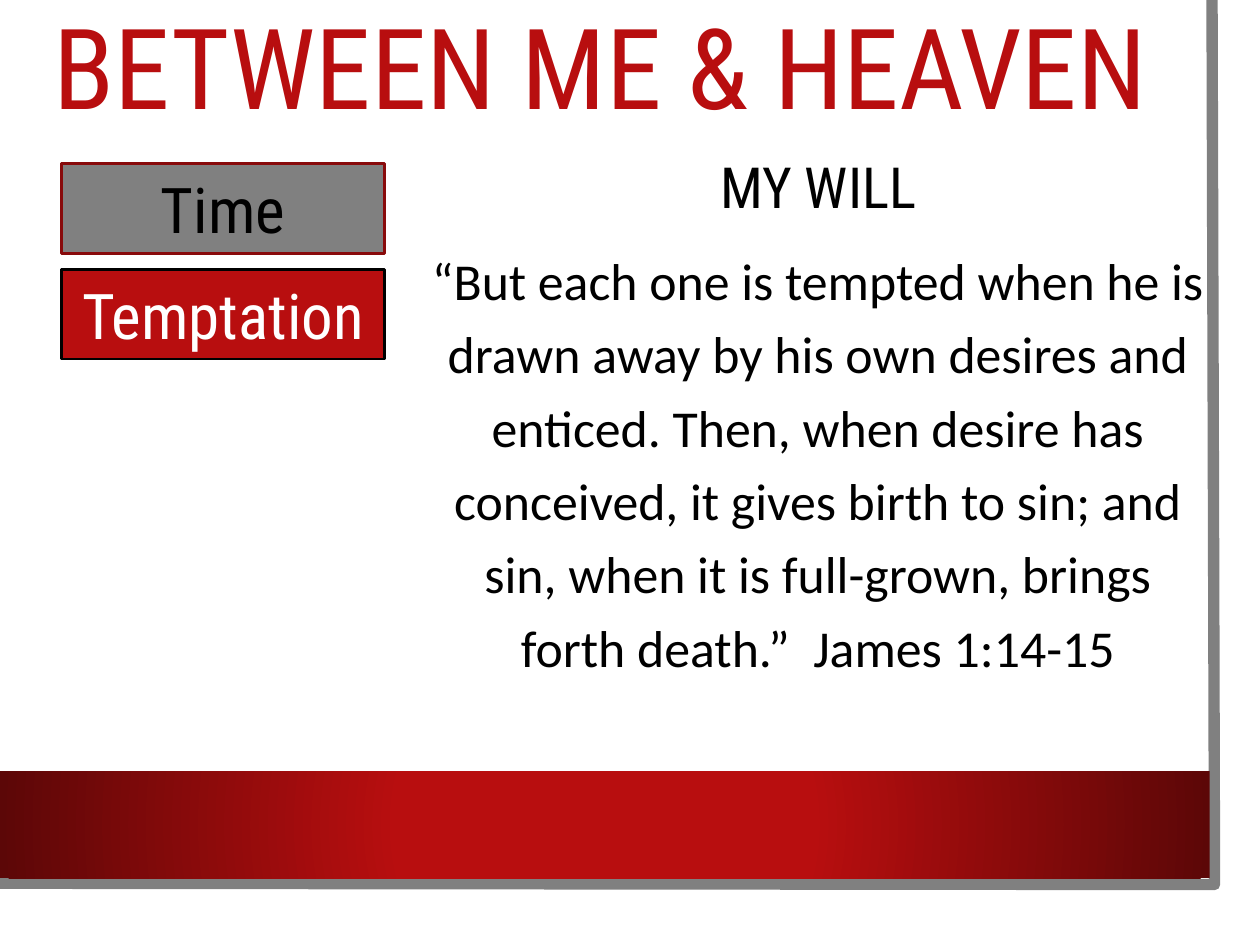
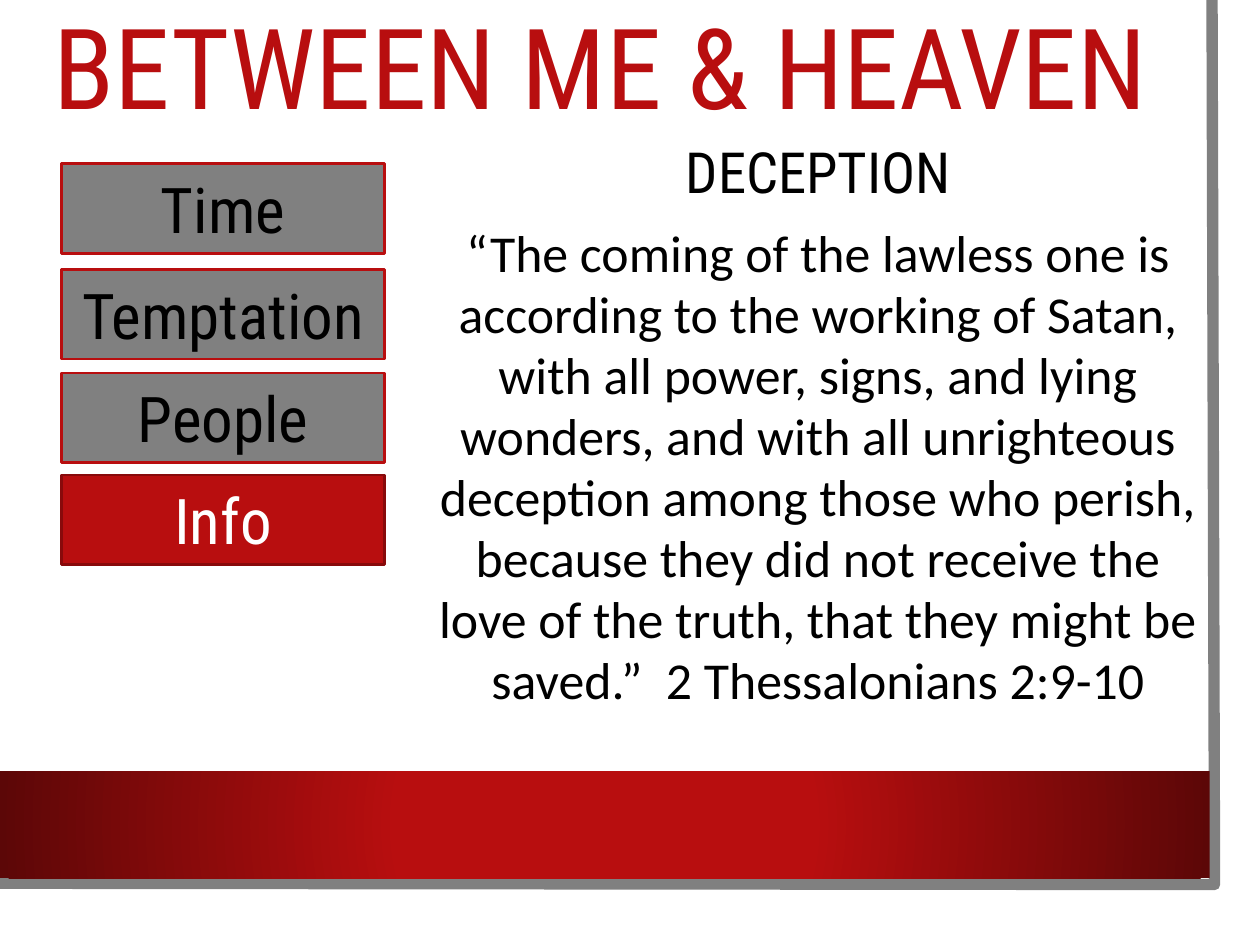
from dataclasses import dataclass

from lxml import etree
from pptx import Presentation
from pptx.dml.color import RGBColor
from pptx.enum.shapes import MSO_SHAPE
from pptx.enum.text import MSO_ANCHOR, PP_ALIGN
from pptx.oxml.ns import qn
from pptx.util import Inches, Pt

RECTANGLE = MSO_SHAPE.RECTANGLE
CENTER = PP_ALIGN.CENTER
TOP = MSO_ANCHOR.TOP
MIDDLE = MSO_ANCHOR.MIDDLE


@dataclass(frozen=True)
class Theme:
    red: str = "B80E0F"
    dark_red: str = "880A0B"
    deep_red: str = "5C0707"
    gray: str = "808080"
    black: str = "000000"
    white: str = "FFFFFF"
    heading_font: str = "Roboto Condensed"
    verse_font: str = "Calibri"
    title_size: float = 64
    button_size: float = 36
    heading_size: float = 32.4
    verse_size: float = 29.6
    frame_width: float = 6.5
    button_line: float = 1.5


THEME = Theme()
TITLE = "BETWEEN ME & HEAVEN"
TITLE_BOX = (0.11, 0.1, 9.31, 1.2)
BUTTON_LEFT, BUTTON_WIDTH, BUTTON_HEIGHT = 0.49, 2.56, 0.71
BUTTON_TOPS = (1.3, 2.14, 2.96, 3.77)

SLIDES = [
    {
        "buttons": ["Time", "Temptation"],
        "rest_line": THEME.dark_red,
        "active_line": THEME.black,
        "heading": "MY WILL",
        "verse": "“But each one is tempted when he is drawn away by his own desires "
                 "and enticed. Then, when desire has conceived, it gives birth to sin; "
                 "and sin, when it is full-grown, brings forth death.”  James 1:14-15",
        "verse_box": (3.31, 1.08, 6.37, 4.81),
        "line_spacing": 1.18,
    },
    {
        "buttons": ["Time", "Temptation", "People", "Info"],
        "rest_line": THEME.red,
        "active_line": THEME.dark_red,
        "heading": "DECEPTION",
        "verse": "“The coming of the lawless one is according to the working of Satan, "
                 "with all power, signs, and lying wonders, and with all unrighteous "
                 "deception among those who perish, because they did not receive the "
                 "love of the truth, that they might be saved.”  2 Thessalonians 2:9-10",
        "verse_box": (3.31, 1.08, 6.37, 5.17),
        "line_spacing": 0.98,
    },
]


def rgb(color):
    return RGBColor.from_string(color)


def inches(box):
    return [Inches(length) for length in box]


def write_text(para, text, *, size, color=THEME.black, font=THEME.heading_font,
               line_spacing=1.0, space_before=0):
    para.alignment = CENTER
    para.line_spacing = line_spacing
    para.space_before = Pt(space_before)
    span = para.add_run()
    span.text = text
    span.font.size = Pt(size)
    span.font.name = font
    span.font.color.rgb = rgb(color)


def set_frame(frame, anchor, *, top=0, bottom=0):
    frame.word_wrap = True
    frame.vertical_anchor = anchor
    frame.margin_top = Inches(top)
    frame.margin_bottom = Inches(bottom)
    return frame


def add_rectangle(page, box, fill, line=None):
    shape = page.shapes.add_shape(RECTANGLE, *inches(box))
    shape.shadow.inherit = False
    shape.fill.solid()
    shape.fill.fore_color.rgb = rgb(fill)
    if line:
        shape.line.color.rgb = rgb(line)
        shape.line.width = Pt(THEME.button_line)
    else:
        shape.line.fill.background()
    return shape


def fill_radial(shape, stops):
    shape.fill.gradient()
    for stop, (position, color) in zip(shape.fill.gradient_stops, stops):
        stop.position = position
        stop.color.rgb = rgb(color)
    gradient = shape._element.spPr.find(qn("a:gradFill"))
    linear = gradient.find(qn("a:lin"))
    radial = etree.Element(qn("a:path"), path="circle")
    etree.SubElement(radial, qn("a:fillToRect"),
                     {side: "50000" for side in "ltrb"})
    gradient.replace(linear, radial)


def add_backdrop(page):
    add_rectangle(page, (0, 0, 9.83, 7.27), THEME.white)
    builder = page.shapes.build_freeform(Inches(9.62), 0)
    builder.add_line_segments([inches((9.64, 7.02)), inches((-0.02, 7.01))], close=False)
    edge = builder.convert_to_shape()
    edge.shadow.inherit = False
    edge.fill.background()
    edge.line.color.rgb = rgb(THEME.gray)
    edge.line.width = Pt(THEME.frame_width)
    band = add_rectangle(page, (0, 6.12, 9.6, 0.85), THEME.red)
    fill_radial(band, [(0.34, THEME.red), (1.0, THEME.deep_red)])


def add_title(page, box):
    frame = set_frame(page.shapes.add_textbox(*inches(box)).text_frame, TOP)
    write_text(frame.paragraphs[0], TITLE, size=THEME.title_size,
               color=THEME.red, line_spacing=0.9)


def add_verse(page, box, heading, verse, line_spacing):
    frame = set_frame(page.shapes.add_textbox(*inches(box)).text_frame, TOP, top=0.03)
    write_text(frame.paragraphs[0], heading, size=THEME.heading_size,
               line_spacing=line_spacing)
    write_text(frame.add_paragraph(), verse, size=THEME.verse_size,
               font=THEME.verse_font, line_spacing=line_spacing, space_before=10)


def add_buttons(page, labels, rest_line, active_line):
    for label, top in zip(labels, BUTTON_TOPS):
        active = label == labels[-1]
        button = add_rectangle(page, (BUTTON_LEFT, top, BUTTON_WIDTH, BUTTON_HEIGHT),
                               THEME.red if active else THEME.gray,
                               active_line if active else rest_line)
        frame = set_frame(button.text_frame, MIDDLE)
        write_text(frame.paragraphs[0], label, size=THEME.button_size,
                   color=THEME.white if active else THEME.black)


def add_page(deck, content):
    page = deck.slides.add_slide(deck.slide_layouts[6])
    add_backdrop(page)
    add_title(page, TITLE_BOX)
    add_verse(page, content["verse_box"], content["heading"], content["verse"],
              content["line_spacing"])
    add_buttons(page, content["buttons"], content["rest_line"], content["active_line"])


def main():
    deck = Presentation()
    deck.slide_width = Inches(10)
    deck.slide_height = Inches(7.5)
    for content in SLIDES:
        add_page(deck, content)
    deck.save("out.pptx")


if __name__ == "__main__":
    main()
